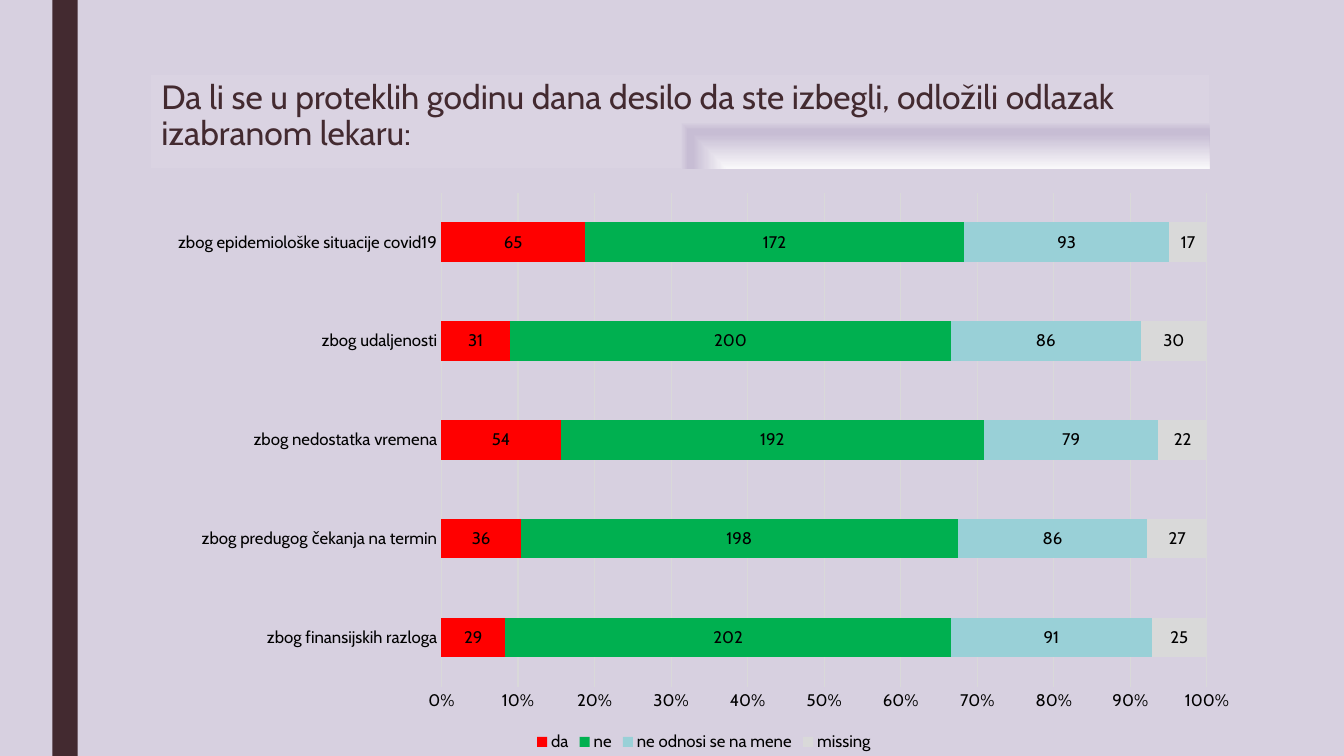
"""Build a slide with a stacked bar chart on reasons for postponing a doctor's visit."""
import pptx
import pptx.chart.data
import pptx.dml.color
import pptx.enum.chart
import pptx.enum.shapes
import pptx.enum.text
import pptx.oxml
import pptx.oxml.ns
import pptx.util

Cm, Pt = pptx.util.Cm, pptx.util.Pt
RGBColor = pptx.dml.color.RGBColor

TITLE = "Da li se u proteklih godinu dana desilo da ste izbegli, odložili odlazak izabranom lekaru:"
REASONS = [
    "zbog finansijskih razloga",
    "zbog predugog čekanja na termin",
    "zbog nedostatka vremena",
    "zbog udaljenosti",
    "zbog epidemiološke situacije covid19",
]
ANSWERS = [
    ("da", (29, 36, 54, 31, 65), RGBColor(0xFF, 0x00, 0x00)),
    ("ne", (202, 198, 192, 200, 172), RGBColor(0x00, 0xB0, 0x50)),
    ("ne odnosi se na mene", (91, 86, 79, 86, 93), RGBColor(0x99, 0xD0, 0xD7)),
    ("missing", (25, 27, 22, 30, 17), RGBColor(0xD9, 0xD9, 0xD9)),
]
TITLE_GRADIENT = [(0, "F9F8FA"), (74, "C7BDD4"), (83, "C7BDD4"), (100, "DAD3E2")]
PLOT_LAYOUT = {"x": 0.26, "y": 0.02, "w": 0.7, "h": 0.86}

FONT = "Cabin"
BACKGROUND = RGBColor(0xD7, 0xD0, 0xE0)
PLUM = RGBColor(0x43, 0x2A, 0x30)
BLACK = RGBColor(0x00, 0x00, 0x00)
GRID = RGBColor(0xD9, 0xD9, 0xD9)


def set_font(font, size, color):
    font.name = FONT
    font.size = Pt(size)
    font.color.rgb = color


def set_line(line):
    line.color.rgb = GRID
    line.width = Pt(0.75)


def add_side_bar(page, height):
    bar = page.shapes.add_shape(
        pptx.enum.shapes.MSO_SHAPE.RECTANGLE, Cm(1.32), 0, Cm(0.64), height)
    bar.shadow.inherit = False
    bar.fill.solid()
    bar.fill.fore_color.rgb = PLUM
    bar.line.fill.background()


def fill_title(page):
    title = page.shapes.title
    title.left, title.top, title.width, title.height = Cm(3.81), Cm(1.9), Cm(26.67), Cm(2.34)
    stops = "".join(
        f'<a:gs pos="{position * 1000}"><a:srgbClr val="{color}"/></a:gs>'
        for position, color in TITLE_GRADIENT)
    title.element.spPr.append(pptx.oxml.parse_xml(
        f'<a:gradFill {pptx.oxml.ns.nsdecls("a")}><a:gsLst>{stops}</a:gsLst>'
        '<a:path path="rect"><a:fillToRect l="100000" t="100000"/></a:path></a:gradFill>'))
    frame = title.text_frame
    frame.text = TITLE
    frame.word_wrap = True
    frame.auto_size = pptx.enum.text.MSO_AUTO_SIZE.NONE
    frame.vertical_anchor = pptx.enum.text.MSO_ANCHOR.TOP
    para = frame.paragraphs[0]
    para.alignment = pptx.enum.text.PP_ALIGN.LEFT
    para.line_spacing = 0.89
    set_font(para.runs[0].font, 24, PLUM)


def add_answer_chart(page):
    data = pptx.chart.data.CategoryChartData()
    data.categories = REASONS
    for name, counts, color in ANSWERS:
        data.add_series(name, counts)
    chart = page.shapes.add_chart(
        pptx.enum.chart.XL_CHART_TYPE.BAR_STACKED_100,
        Cm(3.96), Cm(4.57), Cm(27.56), Cm(14.48), data).chart
    set_font(chart.font, 10, BLACK)
    chart.has_title = False
    chart.has_legend = True
    chart.legend.position = pptx.enum.chart.XL_LEGEND_POSITION.BOTTOM
    chart.legend.include_in_layout = False
    set_font(chart.legend.font, 12, BLACK)

    for axis in (chart.category_axis, chart.value_axis):
        axis.major_tick_mark = pptx.enum.chart.XL_TICK_MARK.NONE
        axis.minor_tick_mark = pptx.enum.chart.XL_TICK_MARK.NONE
        set_font(axis.tick_labels.font, 12, BLACK)
    set_line(chart.category_axis.format.line)
    chart.value_axis.format.line.fill.background()
    chart.value_axis.maximum_scale = 1
    chart.value_axis.major_unit = 0.1
    chart.value_axis.has_major_gridlines = True
    set_line(chart.value_axis.major_gridlines.format.line)
    chart.value_axis.tick_labels.number_format = "0%"
    chart.value_axis.tick_labels.number_format_is_linked = False

    plot = chart.plots[0]
    plot.gap_width = 150
    plot.overlap = 100
    plot.vary_by_categories = False
    for series, (name, counts, color) in zip(plot.series, ANSWERS):
        series.format.fill.solid()
        series.format.fill.fore_color.rgb = color
        labels = series.data_labels
        labels.show_value = True
        labels.position = pptx.enum.chart.XL_LABEL_POSITION.CENTER
        set_font(labels.font, 12, BLACK)
    place_plot(chart)


def place_plot(chart):
    area = chart.element.xpath("c:chart/c:plotArea")[0]
    for layout in area.xpath("c:layout"):
        area.remove(layout)
    modes = "".join(f'<c:{side}Mode val="edge"/>' for side in "xy")
    sizes = "".join(f'<c:{side} val="{share}"/>' for side, share in PLOT_LAYOUT.items())
    area.insert(0, pptx.oxml.parse_xml(
        f'<c:layout {pptx.oxml.ns.nsdecls("c")}><c:manualLayout>'
        f'<c:layoutTarget val="inner"/>{modes}{sizes}</c:manualLayout></c:layout>'))


def main():
    deck = pptx.Presentation()
    deck.slide_width, deck.slide_height = Cm(33.87), Cm(19.05)
    page = deck.slides.add_slide(deck.slide_layouts.get_by_name("Title Only"))
    page.background.fill.solid()
    page.background.fill.fore_color.rgb = BACKGROUND
    add_side_bar(page, deck.slide_height)
    fill_title(page)
    add_answer_chart(page)
    deck.save("out.pptx")


if __name__ == "__main__":
    main()
